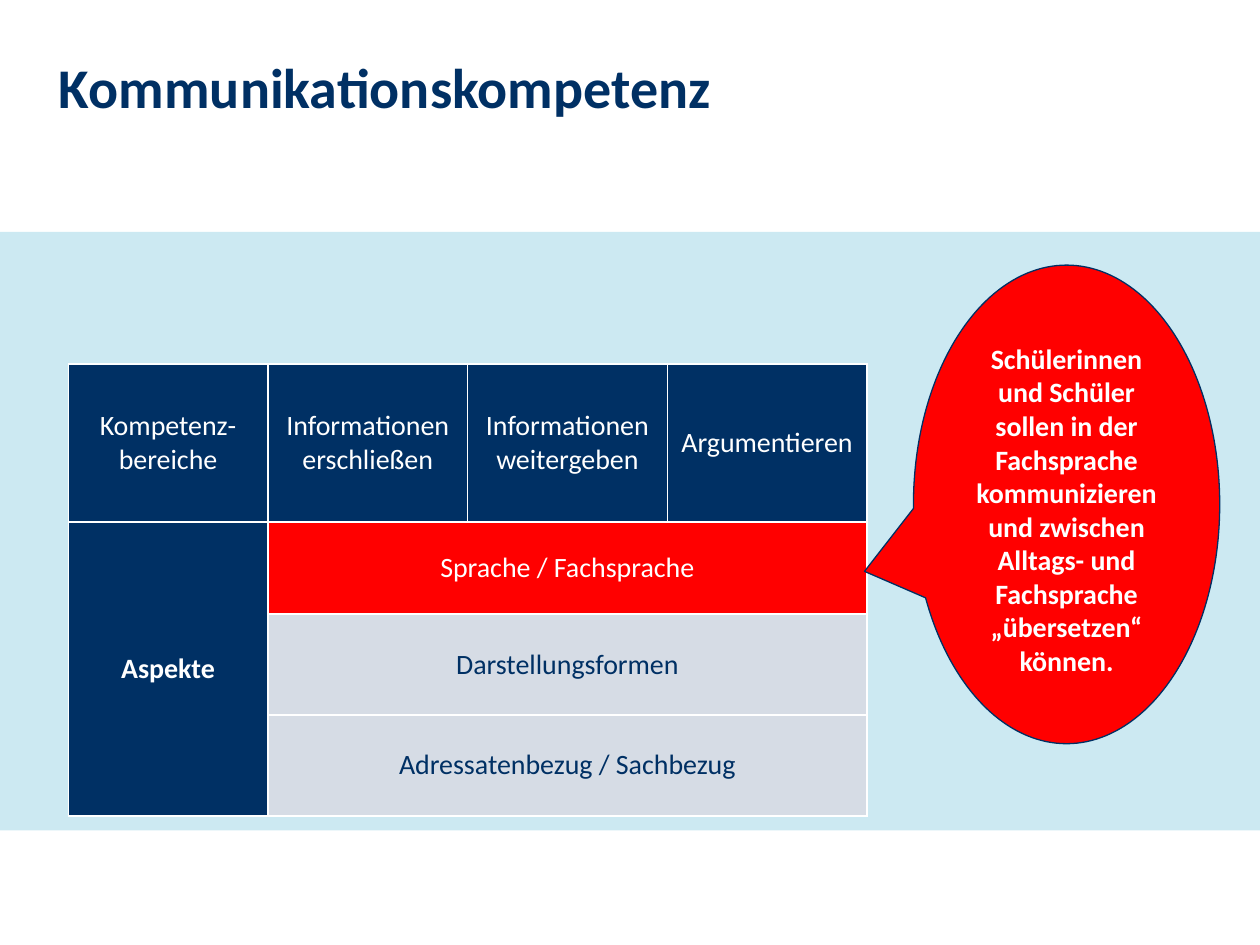
from lxml import etree
from pptx import Presentation
from pptx.dml.color import RGBColor
from pptx.enum import shapes, text
from pptx.oxml import ns
from pptx.util import Pt

# Content
TITLE = "Kommunikationskompetenz"
HEADERS = ["Kompetenz-bereiche", "Informationen erschließen",
           "Informationen weitergeben", "Argumentieren"]
ROW_GROUP = "Aspekte"
ASPECTS = [("Sprache / Fachsprache", "red", "white"),
           ("Darstellungsformen", "grey", "navy"),
           ("Adressatenbezug / Sachbezug", "grey", "navy")]
CALLOUT = ("Schülerinnen und Schüler sollen in der Fachsprache kommunizieren "
           "und zwischen Alltags- und Fachsprache „übersetzen“ können.")

COLORS = {"navy": "003064", "red": "FF0000", "grey": "D6DCE5",
          "band": "CCE9F2", "white": "FFFFFF"}
FONT = "Calibri"
COLUMN_WIDTH = 114.1
ROW_HEIGHTS = [90.4, 52.6, 57.6, 57.6]
BORDER_WIDTH = 0.96


def rgb(name):
    return RGBColor.from_string(COLORS[name])


def write(frame, content, size=16, color="white", bold=False,
          align=text.PP_ALIGN.CENTER, anchor=text.MSO_ANCHOR.TOP):
    frame.word_wrap = True
    frame.auto_size = text.MSO_AUTO_SIZE.NONE
    frame.vertical_anchor = anchor
    paragraph = frame.paragraphs[0]
    paragraph.alignment = align
    run = paragraph.add_run()
    run.text = content
    run.font.name = FONT
    run.font.size = Pt(size)
    run.font.bold = bold
    run.font.color.rgb = rgb(color)


def add_shape(slide, kind, left, top, width, height, fill):
    shape = slide.shapes.add_shape(kind, Pt(left), Pt(top), Pt(width), Pt(height))
    shape.shadow.inherit = False
    shape.fill.solid()
    shape.fill.fore_color.rgb = rgb(fill)
    return shape


def style_cell(cell, fill):
    properties = cell._tc.get_or_add_tcPr()
    for side in ("lnL", "lnR", "lnT", "lnB"):
        line = etree.SubElement(properties, ns.qn(f"a:{side}"), w=str(Pt(BORDER_WIDTH)))
        solid = etree.SubElement(line, ns.qn("a:solidFill"))
        etree.SubElement(solid, ns.qn("a:srgbClr"), val=COLORS["white"])
    cell.fill.solid()
    cell.fill.fore_color.rgb = rgb(fill)


def fill_cell(cell, content, **format):
    write(cell.text_frame, content, **format)
    cell.vertical_anchor = text.MSO_ANCHOR.MIDDLE


def add_competence_table(slide, left, top):
    columns, rows = len(HEADERS), len(ROW_HEIGHTS)
    table = slide.shapes.add_table(
        rows, columns, Pt(left), Pt(top),
        Pt(COLUMN_WIDTH * columns), Pt(sum(ROW_HEIGHTS))).table
    for column in table.columns:
        column.width = Pt(COLUMN_WIDTH)
    for row, height in zip(table.rows, ROW_HEIGHTS):
        row.height = Pt(height)

    # Header row and row group are navy; each aspect has its own fill
    fills = ["navy"] + [fill for _, fill, _ in ASPECTS]
    for row in range(rows):
        for column in range(columns):
            style_cell(table.cell(row, column), fills[row] if column else "navy")

    for column, header in enumerate(HEADERS):
        fill_cell(table.cell(0, column), header)
    table.cell(1, 0).merge(table.cell(rows - 1, 0))
    fill_cell(table.cell(1, 0), ROW_GROUP, bold=True)
    for row, (aspect, _, color) in enumerate(ASPECTS, start=1):
        table.cell(row, 1).merge(table.cell(row, columns - 1))
        fill_cell(table.cell(row, 1), aspect, color=color)


def main():
    presentation = Presentation()
    presentation.slide_width, presentation.slide_height = Pt(720), Pt(540)
    slide = presentation.slides.add_slide(presentation.slide_layouts[5])

    # Background band
    band = add_shape(slide, shapes.MSO_SHAPE.RECTANGLE, 0, 132.5, 720, 342, "band")
    band.line.fill.background()

    # Title
    title = slide.shapes.title
    title.left, title.top, title.width, title.height = Pt(26.5), Pt(26.5), Pt(395), Pt(66)
    write(title.text_frame, TITLE, size=32, color="navy", bold=True,
          align=text.PP_ALIGN.LEFT)

    add_competence_table(slide, 39, 208)

    # Callout pointing at the highlighted aspect
    callout = add_shape(slide, shapes.MSO_SHAPE.OVAL_CALLOUT, 522, 151.5, 175, 273.5, "red")
    callout.adjustments[0], callout.adjustments[1] = -0.66, 0.14
    callout.line.color.rgb = rgb("navy")
    callout.line.width = Pt(0.75)
    write(callout.text_frame, CALLOUT, bold=True)

    presentation.save("out.pptx")


if __name__ == "__main__":
    main()
